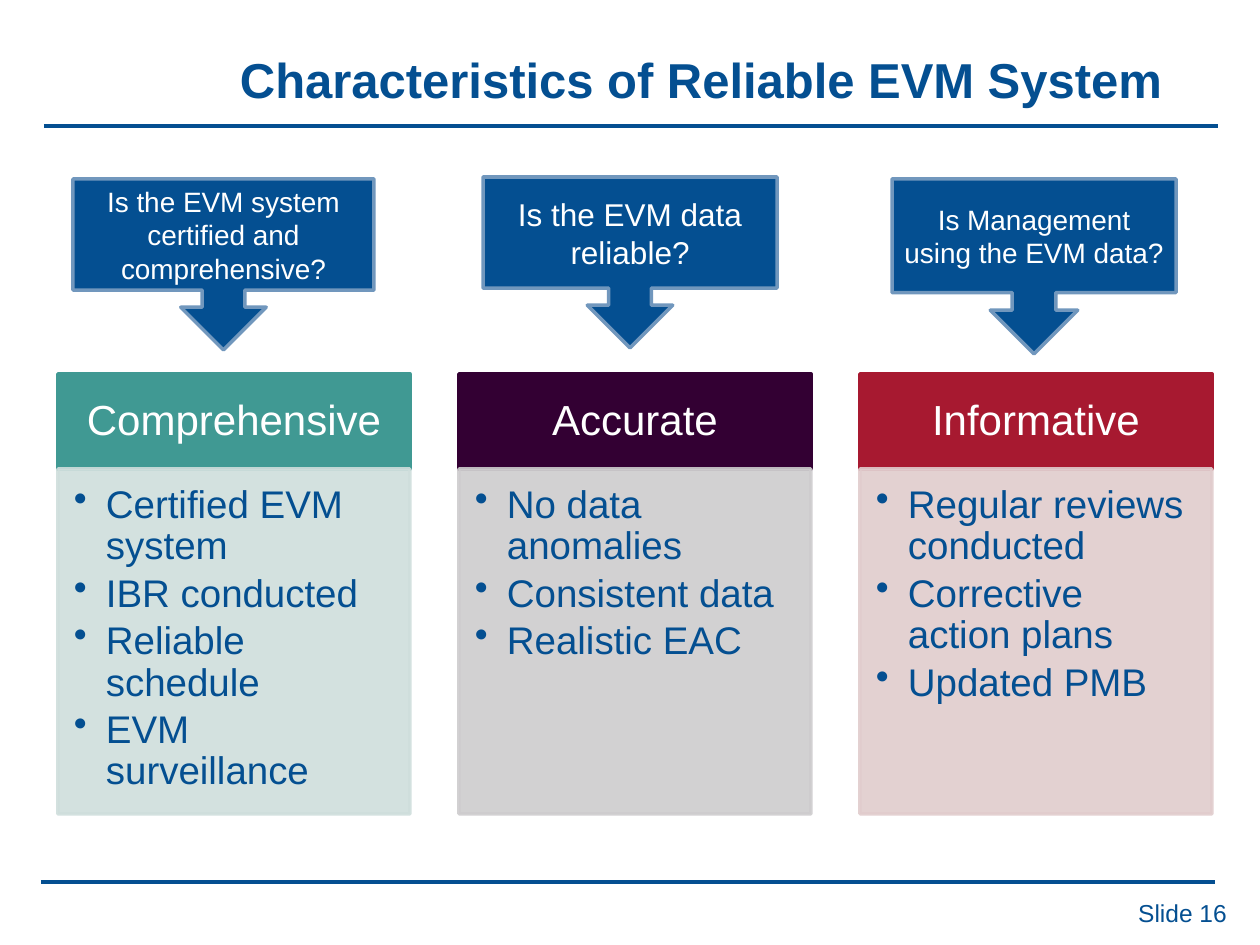
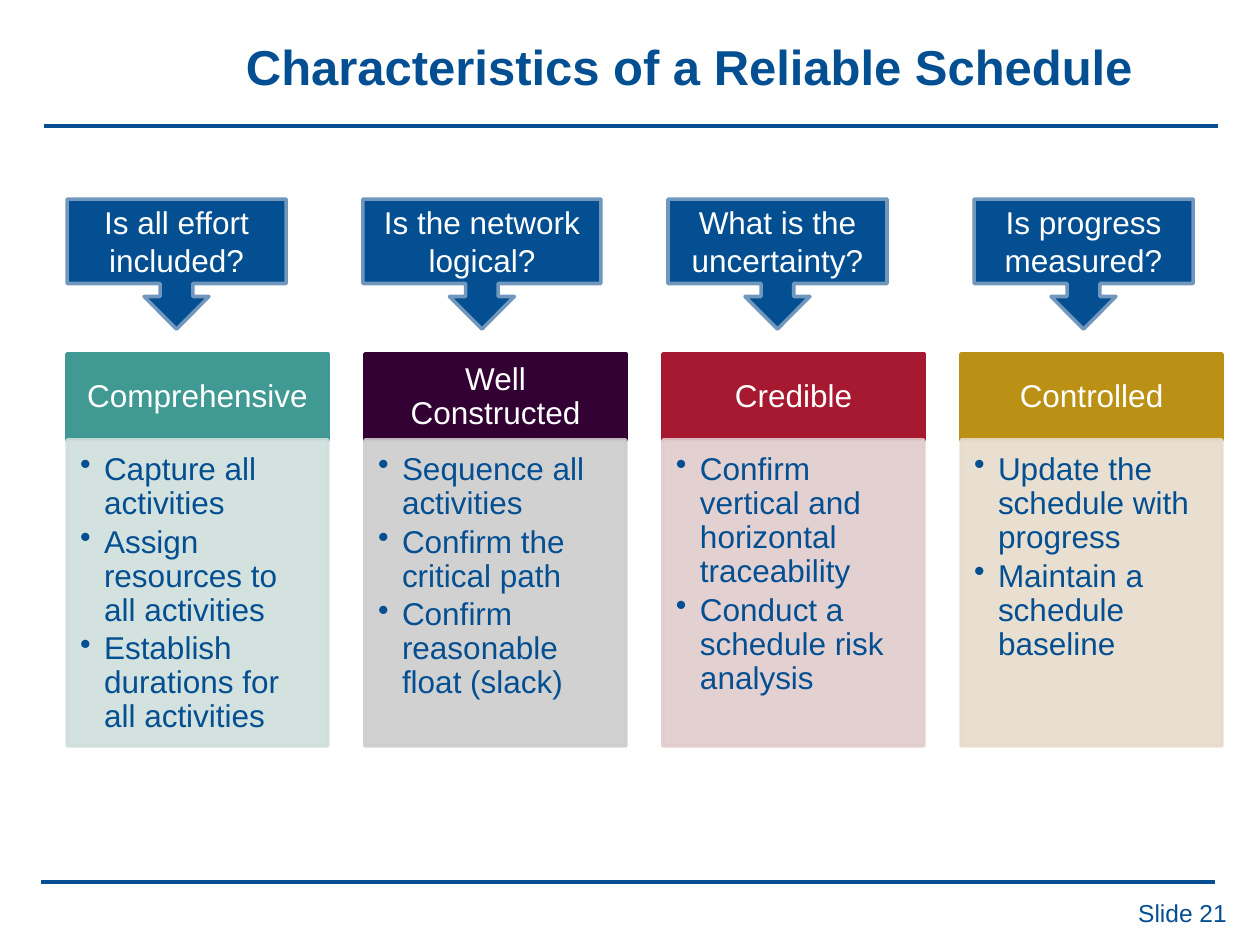
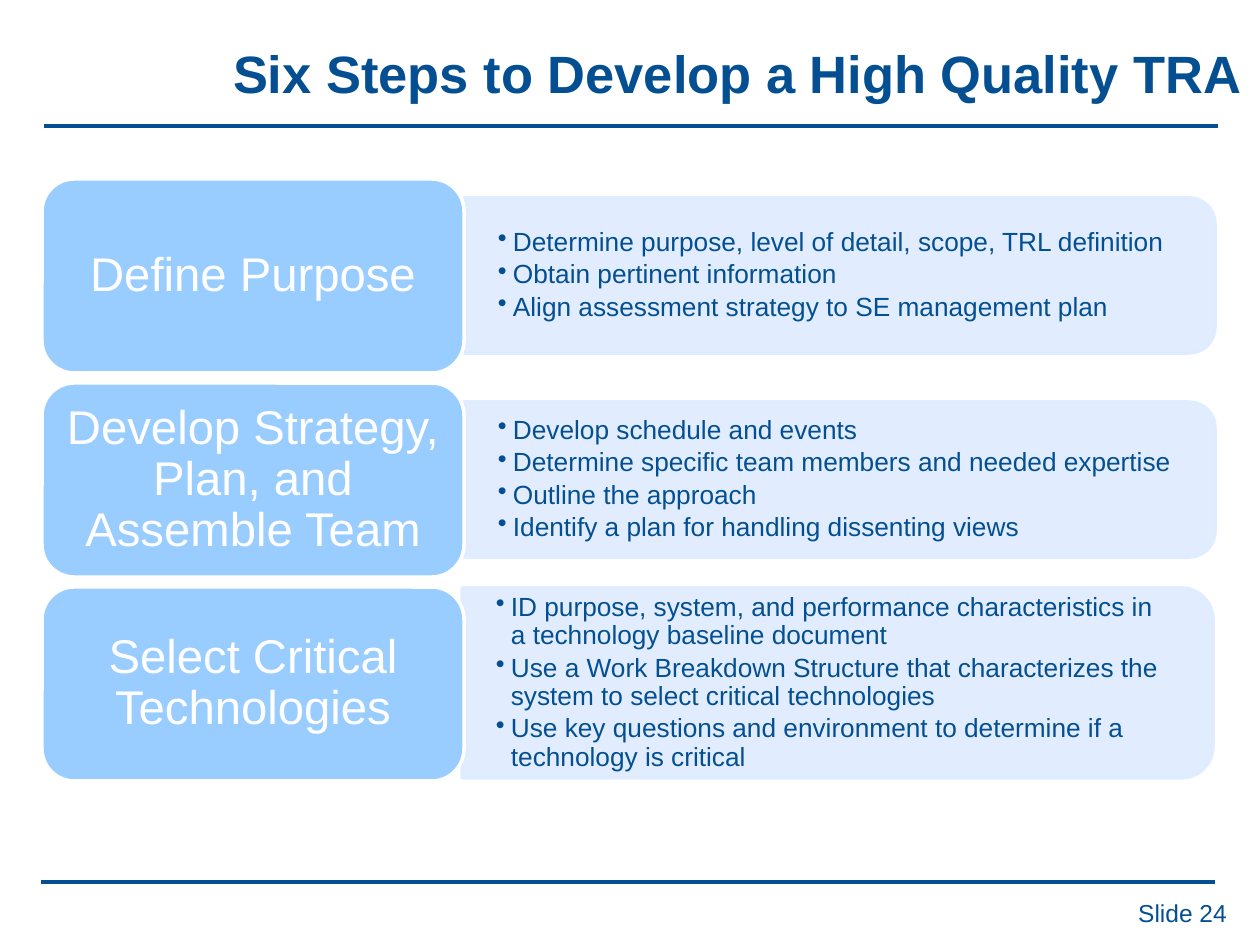
from lxml import etree
from pptx import Presentation
from pptx import util as u
from pptx.dml.color import RGBColor
from pptx.enum import shapes, text
from pptx.oxml.ns import qn

PX = u.Inches(1) / 126
FONT = "Arial"
BLUE = RGBColor(0x04, 0x4F, 0x91)
EDGE = RGBColor(0x71, 0x97, 0xBD)
WHITE = RGBColor(0xFF, 0xFF, 0xFF)
SKY = RGBColor(0x99, 0xCC, 0xFF)
PALE_SKY = RGBColor(0xDE, 0xEC, 0xFF)
# Header colour and body tint of each column, left to right
COLUMN_COLORS = [
    (RGBColor(0x40, 0x99, 0x93), RGBColor(0xCF, 0xDE, 0xDC)),
    (RGBColor(0x33, 0x00, 0x33), RGBColor(0xCE, 0xCC, 0xCE)),
    (RGBColor(0xA7, 0x19, 0x30), RGBColor(0xE1, 0xCC, 0xCD)),
    (RGBColor(0xBB, 0x91, 0x15), RGBColor(0xE7, 0xDC, 0xCC)),
]
SHAPE = shapes.MSO_SHAPE
LEFT, CENTER, RIGHT = text.PP_ALIGN.LEFT, text.PP_ALIGN.CENTER, text.PP_ALIGN.RIGHT
TOP, MIDDLE = text.MSO_ANCHOR.TOP, text.MSO_ANCHOR.MIDDLE

# Content: callouts are (question, size, box); columns are (header, bullets)
EVM = {
    "title": ("Characteristics of Reliable EVM System", 28, (227, 16, 1018, 126)),
    "number": 16,
    "callouts": [
        ("Is the EVM system certified and comprehensive?", 16, (73, 179, 301, 171)),
        ("Is the EVM data reliable?", 18, (483, 177, 294, 171)),
        ("Is Management using the EVM data?", 16, (892, 179, 284, 175)),
    ],
    "columns": [
        ("Comprehensive", ["Certified EVM system", "IBR conducted",
                           "Reliable schedule", "EVM surveillance"]),
        ("Accurate", ["No data anomalies", "Consistent data", "Realistic EAC"]),
        ("Informative", ["Regular reviews conducted", "Corrective action plans",
                         "Updated PMB"]),
    ],
    "grid": dict(left=58, top=374, pitch=401, width=352, head=95, body=345),
    "head_text": dict(size=24, insets=(24, 14, 24, 14)),
    "body_text": dict(size=22, insets=(16, 16, 21, 24), indent=32),
}
SCHEDULE = {
    "title": ("Characteristics of a Reliable Schedule", 28, (233, 3, 1023, 126)),
    "number": 21,
    "callouts": [
        ("Is all effort included?", 18, (67, 199, 219, 130)),
        ("Is the network logical?", 18, (363, 199, 238, 130)),
        ("What is the uncertainty?", 18, (668, 199, 219, 130)),
        ("Is progress measured?", 18, (974, 199, 219, 130)),
    ],
    "columns": [
        ("Comprehensive", ["Capture all activities",
                           "Assign resources to all activities",
                           "Establish durations for all activities"]),
        ("Well Constructed", ["Sequence all activities", "Confirm the critical path",
                              "Confirm reasonable float (slack)"]),
        ("Credible", ["Confirm vertical and horizontal traceability",
                      "Conduct a schedule risk analysis"]),
        ("Controlled", ["Update the schedule with progress",
                        "Maintain a schedule baseline"]),
    ],
    "grid": dict(left=67, top=354, pitch=298, width=261, head=86, body=306),
    "head_text": dict(size=18, insets=(18, 10, 18, 10)),
    "body_text": dict(size=18, insets=(13, 13, 18, 20), indent=24),
}
TRA_TITLE = ("Six Steps to Develop a High Quality TRA", 30, (220, 10, 1040, 126))
# Step, bullets, bar (left, top, height)
TRA_STEPS = [
    ("Define Purpose",
     ["Determine purpose, level of detail, scope, TRL definition",
      "Obtain pertinent information",
      "Align assessment strategy to SE management plan"], (464, 198, 155)),
    ("Develop Strategy, Plan, and Assemble Team",
     ["Develop schedule and events",
      "Determine specific team members and needed expertise",
      "Outline the approach",
      "Identify a plan for handling dissenting views"], (464, 402, 155)),
    ("Select Critical Technologies",
     ["ID purpose, system, and performance characteristics in a technology "
      "baseline document",
      "Use a Work Breakdown Structure that characterizes the system to select "
      "critical technologies",
      "Use key questions and environment to determine if a technology is critical"],
     (462, 588, 190)),
]


def emu(*lengths):
    return [round(n * PX) for n in lengths]


def write(sp, lines, size, color=WHITE, align=CENTER, anchor=MIDDLE,
          insets=(13, 6, 13, 6), spacing=None, after=0, indent=0, bold=False):
    """Fill a shape with paragraphs; a non-zero indent makes them bullets."""
    tf = sp.text_frame
    tf.word_wrap = True
    tf.vertical_anchor = anchor
    tf.margin_left, tf.margin_top, tf.margin_right, tf.margin_bottom = emu(*insets)
    tf.text = "\n".join(lines)
    for p in tf.paragraphs:
        p.alignment = align
        p.space_after = u.Pt(after)
        if spacing:
            p.line_spacing = spacing
        if indent:
            pPr = p._p.get_or_add_pPr()
            hang = round(indent * PX)
            pPr.set("marL", str(hang))
            pPr.set("indent", str(-hang))
            etree.SubElement(pPr, qn("a:buChar"), char="•")
        for r in p.runs:
            r.font.name, r.font.size, r.font.bold = FONT, u.Pt(size), bold
            r.font.color.rgb = color


def write_label(sp, label, size, insets):
    write(sp, [label], size, insets=insets, spacing=0.9)


def write_bullets(sp, bullets, size, insets, indent, anchor=TOP):
    write(sp, bullets, size, BLUE, LEFT, anchor, insets, 0.9, 0.15 * size, indent)


def add_block(s, kind, box, fill, line, opacity=100):
    sp = s.shapes.add_shape(kind, *emu(*box))
    sp.shadow.inherit = False
    sp.fill.solid()
    sp.fill.fore_color.rgb = fill
    sp.line.color.rgb = line
    sp.line.width = u.Pt(2)
    if opacity < 100:
        for clr in sp._element.spPr.iter(qn("a:srgbClr")):
            etree.SubElement(clr, qn("a:alpha"), val=str(opacity * 1000))
    return sp


def add_text_box(s, box):
    return s.shapes.add_textbox(*emu(*box))


def add_slide(prs, title, number):
    """Start a slide with its rules, title and slide number."""
    s = prs.slides.add_slide(prs.slide_layouts[6])
    for left, right, y in [(44, 1218, 126), (41, 1215, 882)]:
        rule = s.shapes.add_connector(shapes.MSO_CONNECTOR.STRAIGHT,
                                      *emu(left, y, right, y))
        rule.line.color.rgb = BLUE
        rule.line.width = u.Pt(2.5)
        etree.SubElement(rule._element.spPr, qn("a:effectLst"))
    label, size, box = title
    write(add_text_box(s, box), [label], size, BLUE, LEFT,
          insets=(13, 6, 0, 6), bold=True)
    write(add_text_box(s, (1061, 892, 179, 43)), [f"Slide {number}"], 14, BLUE,
          RIGHT, TOP)
    return s


def add_columns_slide(prs, deck):
    s = add_slide(prs, deck["title"], deck["number"])
    grid = deck["grid"]
    # Coloured headers over tinted bullet panels
    for i, (header, bullets) in enumerate(deck["columns"]):
        color, tint = COLUMN_COLORS[i]
        x = grid["left"] + i * grid["pitch"]
        head = (x, grid["top"], grid["width"], grid["head"])
        body = (x, grid["top"] + grid["head"], grid["width"], grid["body"])
        write_label(add_block(s, SHAPE.RECTANGLE, head, color, color),
                    header, **deck["head_text"])
        write_bullets(add_block(s, SHAPE.RECTANGLE, body, tint, tint, 90),
                      bullets, **deck["body_text"])
    # Questions pointing down at the columns
    for question, size, box in deck["callouts"]:
        sp = add_block(s, SHAPE.DOWN_ARROW_CALLOUT, box, BLUE, EDGE)
        write(sp, [question], size, insets=(11, 5, 11, 5))


def add_steps_slide(prs):
    s = add_slide(prs, TRA_TITLE, 24)
    length = 751
    for i, (step, bullets, (x, y, height)) in enumerate(TRA_STEPS):
        # The bar is an upright shape turned a quarter about its centre
        shift = (length - height) / 2
        bar = add_block(s, SHAPE.ROUND_2_SAME_RECTANGLE,
                        (x + shift, y - shift, height, length),
                        PALE_SKY, PALE_SKY, 90)
        bar.rotation = 90
        write_bullets(add_text_box(s, (x, y + 8, 743, height - 16)), bullets, 15,
                      (34, 18, 34, 18), 15, MIDDLE)
        label = add_block(s, SHAPE.ROUNDED_RECTANGLE,
                          (42, 179 + i * 204, 422, 194), SKY, WHITE)
        write_label(label, step, 27, (14, 8, 14, 8))


def main():
    prs = Presentation()
    prs.slide_width, prs.slide_height = u.Inches(10), u.Inches(7.5)
    add_columns_slide(prs, EVM)
    add_columns_slide(prs, SCHEDULE)
    add_steps_slide(prs)
    prs.save("out.pptx")


if __name__ == "__main__":
    main()
